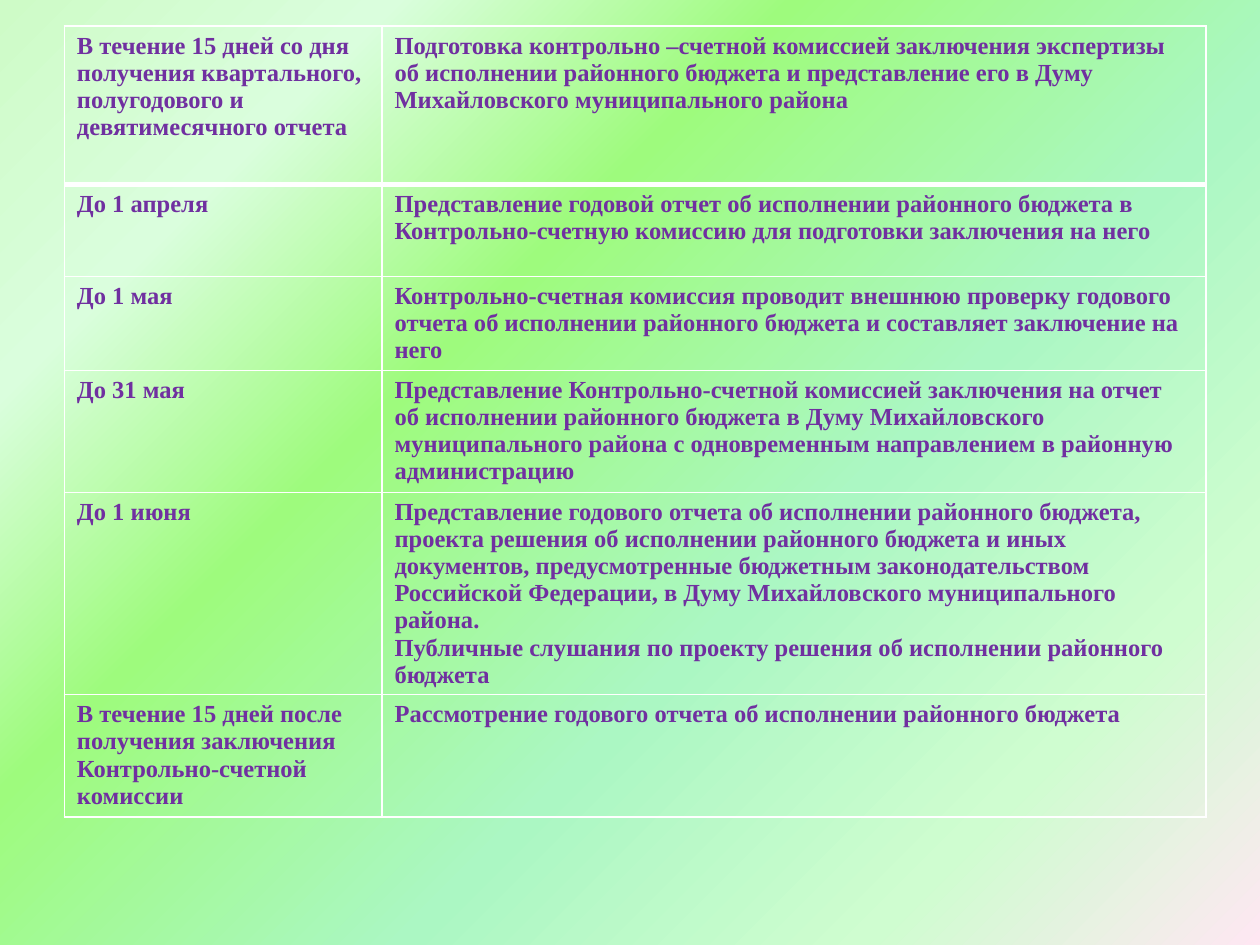
import copy
import pptx
import pptx.util
import pptx.dml.color
import pptx.oxml
import pptx.oxml.ns

Pt = pptx.util.Pt
RGB = pptx.dml.color.RGBColor
WHITE = RGB(0xFF, 0xFF, 0xFF)
PURPLE = RGB(0x70, 0x30, 0xA0)
STOPS = [
    (0, RGB(0xCE, 0xFB, 0xC7)),
    (0.18, RGB(0xDA, 0xFE, 0xDD)),
    (0.36, RGB(0x9E, 0xFB, 0x7D)),
    (0.61, RGB(0xAB, 0xF7, 0xC3)),
    (0.82, RGB(0xCF, 0xFD, 0xD0)),
    (1, RGB(0xFE, 0xE7, 0xF2)),
]
FONT = "Times New Roman"
COLS = [181.5, 471]
ROWS = [
    (90.5, "В течение 15 дней со дня получения квартального, полугодового и девятимесячного отчета",
     ["Подготовка контрольно –счетной комиссией заключения экспертизы об исполнении районного бюджета и представление его в Думу Михайловского муниципального района"]),
    (52.5, "До 1 апреля",
     ["Представление годовой отчет об исполнении районного бюджета в Контрольно-счетную комиссию для подготовки заключения на него"]),
    (50, "До 1 мая",
     ["Контрольно-счетная комиссия проводит внешнюю проверку годового отчета об исполнении районного бюджета и составляет заключение на него"]),
    (69.8, "До 31 мая",
     ["Представление Контрольно-счетной комиссией заключения на отчет об исполнении районного бюджета в Думу Михайловского муниципального района с одновременным направлением в районную администрацию"]),
    (90.5, "До 1 июня",
     ["Представление годового отчета об исполнении районного бюджета, проекта решения об исполнении районного бюджета и иных документов, предусмотренные бюджетным законодательством Российской Федерации, в Думу Михайловского муниципального района.",
      "Публичные слушания по проекту решения об исполнении районного бюджета"]),
    (69.8, "В течение 15 дней после получения заключения Контрольно-счетной комиссии",
     ["Рассмотрение годового отчета об исполнении районного бюджета"]),
]


def paint_back(slide):
    fill = slide.background.fill
    fill.gradient()
    fill.gradient_angle = 315
    group = slide.element.find(".//" + pptx.oxml.ns.qn("a:gsLst"))
    for _ in STOPS[2:]:
        group.append(copy.deepcopy(group[0]))
    for stop, (place, color) in zip(fill.gradient_stops, STOPS):
        stop.position = place
        stop.color.rgb = color


def add_edges(cell, widths):
    props = cell._tc.get_or_add_tcPr()
    for spot, (side, width) in enumerate(widths.items()):
        props.insert(spot, pptx.oxml.parse_xml(
            f'<a:ln{side} {pptx.oxml.ns.nsdecls("a")} w="{Pt(width)}">'
            f'<a:solidFill><a:srgbClr val="{WHITE}"/></a:solidFill></a:ln{side}>'))


def fill_cell(cell, texts):
    frame = cell.text_frame
    for num, text in enumerate(texts):
        para = frame.add_paragraph() if num else frame.paragraphs[0]
        run = para.add_run()
        run.text = text
        font = run.font
        font.name = FONT
        font.size = Pt(14)
        font.bold = True
        font.color.rgb = PURPLE
    cell.fill.background()


def add_dates(slide, left, top, width, height):
    table = slide.shapes.add_table(
        len(ROWS), len(COLS), Pt(left), Pt(top), Pt(width), Pt(height)).table
    table.first_row = False
    table.horz_banding = False
    for col, size in zip(table.columns, COLS):
        col.width = Pt(size)
    for num, (size, date, texts) in enumerate(ROWS):
        table.rows[num].height = Pt(size)
        for col, words in enumerate([[date], texts]):
            cell = table.cell(num, col)
            fill_cell(cell, words)
            add_edges(cell, {"L": 1, "R": 1, "T": 3 if num == 1 else 1,
                             "B": 1 if num else 3})


def main():
    deck = pptx.Presentation()
    deck.slide_width = Pt(720)
    deck.slide_height = Pt(540)
    slide = deck.slides.add_slide(deck.slide_layouts[6])
    paint_back(slide)
    add_dates(slide, 36.8, 15, sum(COLS), sum(row[0] for row in ROWS))
    deck.save("out.pptx")


if __name__ == "__main__":
    main()
